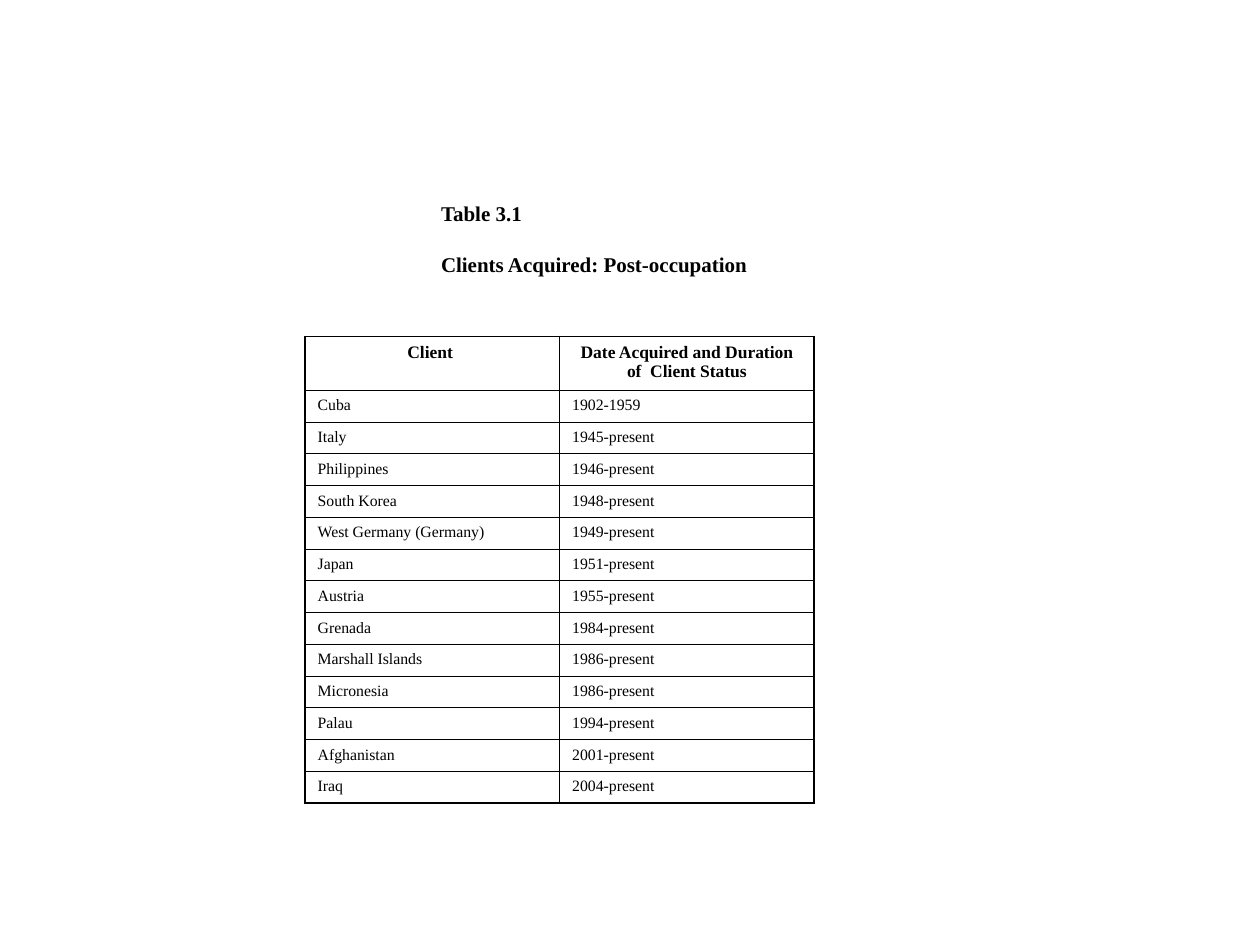
from lxml import etree
from pptx import Presentation
from pptx.dml.color import RGBColor
from pptx.enum.text import MSO_ANCHOR, MSO_AUTO_SIZE, PP_ALIGN
from pptx.oxml.ns import qn
from pptx.util import Cm, Pt

BLACK = RGBColor(0, 0, 0)
FACE = "Times New Roman"
LEFT, MID = PP_ALIGN.LEFT, PP_ALIGN.CENTER
TOP = MSO_ANCHOR.TOP
FIXED = MSO_AUTO_SIZE.NONE
THIN, THICK = Pt(0.75), Pt(1)

TITLE = ["Table 3.1", "Clients Acquired: Post-occupation"]
HEAD = ("Client ", "Date Acquired and Duration of  Client Status")
ROWS = [
    ("Cuba", "1902-1959"),
    ("Italy", "1945-present"),
    ("Philippines", "1946-present"),
    ("South Korea", "1948-present"),
    ("West Germany (Germany)", "1949-present"),
    ("Japan", "1951-present"),
    ("Austria", "1955-present"),
    ("Grenada", "1984-present"),
    ("Marshall Islands", "1986-present"),
    ("Micronesia", "1986-present"),
    ("Palau", "1994-present"),
    ("Afghanistan", "2001-present"),
    ("Iraq", "2004-present"),
]


def set_all(item, values):
    for name, value in values.items():
        setattr(item, name, value)


def style(para, size, bold, align):
    para.alignment = align
    set_all(para.font, {"name": FACE, "size": Pt(size), "bold": bold})
    para.font.color.rgb = BLACK


def add_title(slide, left, top, width, height):
    title = slide.shapes.title
    set_all(title, {"left": left, "top": top, "width": width, "height": height})
    frame = title.text_frame
    set_all(frame, {
        "margin_left": 0, "margin_right": 0,
        "margin_top": Cm(0.43), "margin_bottom": Cm(0.1),
        "vertical_anchor": TOP, "auto_size": FIXED, "word_wrap": False,
    })
    frame.text = "\n".join(TITLE)
    for para in frame.paragraphs:
        style(para, 12, True, LEFT)
        para.space_before = Pt(0)
    frame.paragraphs[0].space_after = Pt(14.8)


def add_edges(cell, widths):
    """Draw the cell borders; they must come before the fill in the XML."""
    props = cell._tc.get_or_add_tcPr()
    for spot, (side, width) in enumerate(widths.items()):
        line = etree.Element(qn("a:ln" + side), w=str(width))
        fill = etree.SubElement(line, qn("a:solidFill"))
        etree.SubElement(fill, qn("a:srgbClr"), val=str(BLACK))
        props.insert(spot, line)


def add_table(slide, left, top, width, head, step):
    data = [HEAD] + ROWS
    last = len(data) - 1
    height = head + step * len(ROWS)
    table = slide.shapes.add_table(
        len(data), len(HEAD), left, top, width, height).table
    set_all(table, {"first_row": False, "horz_banding": False})
    for col in table.columns:
        col.width = width // len(HEAD)

    for r, texts in enumerate(data):
        table.rows[r].height = step if r else head
        for c, text in enumerate(texts):
            cell = table.cell(r, c)
            cell.text = text
            cell.fill.background()
            para = cell.text_frame.paragraphs[0]
            if r == 0:
                style(para, 10, True, MID)
            else:
                style(para, 9, False, LEFT)
            # Thick lines round the header and the outer edge
            add_edges(cell, {
                "L": THICK if r == 0 or c == 0 else THIN,
                "R": THICK if r == 0 or c == 1 else THIN,
                "T": THICK if r <= 1 else THIN,
                "B": THICK if r in (0, last) else THIN,
            })


def main():
    deck = Presentation()
    set_all(deck, {"slide_width": Cm(25.4), "slide_height": Cm(19.05)})
    slide = deck.slides.add_slide(deck.slide_layouts[5])
    add_title(slide, Cm(8.89), Cm(3.61), Cm(6.2), Cm(2.82))
    add_table(slide, Cm(6.15), Cm(6.78), Cm(10.26), Cm(1.09), Cm(0.64))
    deck.save("out.pptx")


if __name__ == "__main__":
    main()
